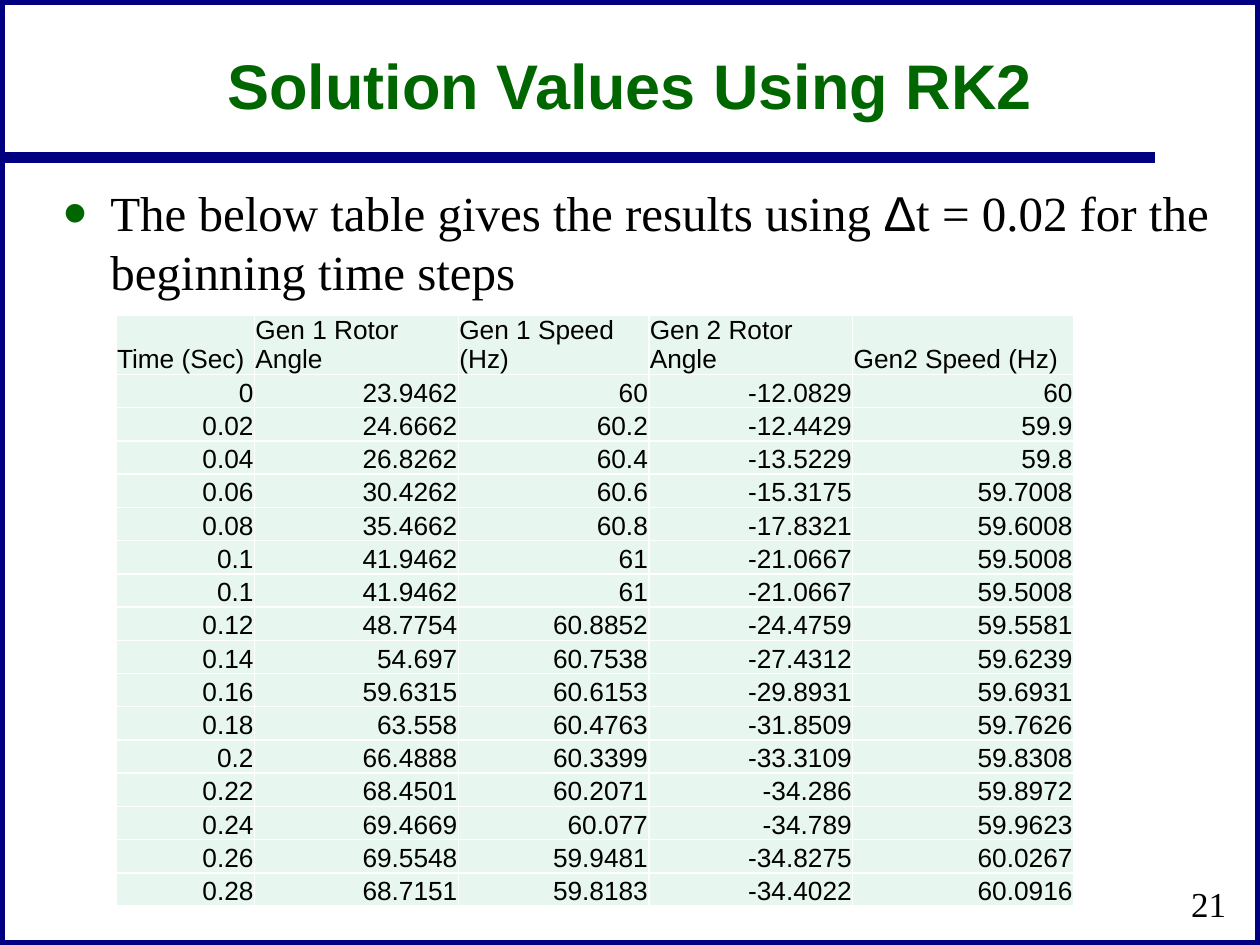
from dataclasses import dataclass

from lxml.etree import SubElement as Sub
from pptx import Presentation
from pptx.dml.color import RGBColor as Rgb
from pptx.enum.shapes import MSO_CONNECTOR as Link, MSO_SHAPE as Form
from pptx.enum.text import MSO_ANCHOR as Anchor, MSO_AUTO_SIZE as Fit, PP_ALIGN as Align
from pptx.oxml.ns import qn
from pptx.util import Cm, Pt


@dataclass(frozen=True)
class Theme:
    navy: str = "000080"
    green: str = "006600"
    black: str = "000000"
    white: str = "FFFFFF"
    mint: str = "E7F6EF"
    sans: str = "Arial"
    serif: str = "Times New Roman"
    title: int = 36
    body: int = 28
    page: int = 20
    cell: int = 15
    rule: int = 6
    grid: int = 1


class Deck:
    def __init__(self, theme):
        self.theme = theme
        self.show = Presentation()
        self.show.slide_width, self.show.slide_height = Cm(25.4), Cm(19.05)
        self.slide = self.show.slides.add_slide(self.show.slide_layouts[1])
        fill = self.slide.background.fill
        fill.solid()
        fill.fore_color.rgb = Rgb.from_string(theme.white)

    def style(self, font, name, size, color, bold=False):
        font.name, font.size, font.bold = name, Pt(size), bold
        font.color.rgb = Rgb.from_string(color)

    def stroke(self, line):
        line.color.rgb = Rgb.from_string(self.theme.navy)
        line.width = Pt(self.theme.rule)

    def place(self, shape, box):
        shape.left, shape.top, shape.width, shape.height = map(Cm, box)
        shape.text_frame.word_wrap = True
        shape.text_frame.auto_size = Fit.NONE
        return shape.text_frame

    def frame(self):
        size = self.show.slide_width, self.show.slide_height
        edge = self.slide.shapes.add_shape(Form.RECTANGLE, 0, 0, *size)
        edge.shadow.inherit = False
        edge.fill.background()
        self.stroke(edge.line)

    def rule(self, left, right, top):
        ends = map(Cm, (left, top, right, top))
        line = self.slide.shapes.add_connector(Link.STRAIGHT, *ends)
        Sub(line.element.spPr, qn("a:effectLst"))
        self.stroke(line.line)

    def title(self, text, box):
        look = self.theme
        area = self.place(self.slide.shapes.title, box)
        area.text = text
        area.vertical_anchor = Anchor.MIDDLE
        para = area.paragraphs[0]
        para.alignment = Align.CENTER
        self.style(para.runs[0].font, look.sans, look.title, look.green, True)

    def bullet(self, parts, box, indent):
        look = self.theme
        area = self.place(self.slide.placeholders[1], box)
        para = area.paragraphs[0]
        props = para._p.get_or_add_pPr()
        props.set("marL", str(Cm(indent)))
        props.set("indent", str(-Cm(indent)))
        Sub(Sub(props, qn("a:buClr")), qn("a:srgbClr"), val=look.green)
        Sub(props, qn("a:buSzPct"), val="140000")
        Sub(props, qn("a:buChar"), char="•")
        para.space_before = Pt(0)
        for text, name in parts:
            run = para.add_run()
            run.text = text
            self.style(run.font, name, look.body, look.black)

    def page(self, text, box):
        look = self.theme
        area = self.place(self.slide.shapes.add_textbox(*map(Cm, box)), box)
        area.text = text
        area.vertical_anchor = Anchor.MIDDLE
        para = area.paragraphs[0]
        para.alignment = Align.RIGHT
        self.style(para.runs[0].font, look.serif, look.page, look.black)

    def cell(self, cell, text, align):
        look = self.theme
        cell.text = text
        cell.vertical_anchor = Anchor.BOTTOM
        cell.margin_left = cell.margin_right = cell.margin_top = Cm(0.02)
        cell.margin_bottom = 0
        props = cell._tc.get_or_add_tcPr()
        for side in ("lnL", "lnR", "lnT", "lnB"):
            line = Sub(props, qn(f"a:{side}"), w=str(Pt(look.grid)))
            Sub(Sub(line, qn("a:solidFill")), qn("a:srgbClr"), val=look.white)
        cell.fill.solid()
        cell.fill.fore_color.rgb = Rgb.from_string(look.mint)
        para = cell.text_frame.paragraphs[0]
        para.alignment = align
        self.style(para.runs[0].font, look.sans, look.cell, look.black)

    def table(self, rows, left, top, widths, head, step):
        high = head + step * (len(rows) - 1)
        box = map(Cm, (left, top, sum(widths), high))
        grid = self.slide.shapes.add_table(len(rows), len(widths), *box).table
        grid.first_row = grid.horz_banding = False
        for col, width in zip(grid.columns, widths):
            col.width = Cm(width)
        for i, row in enumerate(rows):
            grid.rows[i].height = Cm(step if i else head)
            for j, text in enumerate(row):
                self.cell(grid.cell(i, j), text, Align.RIGHT if i else Align.LEFT)

    def save(self):
        self.show.save("out.pptx")


HEAD = ["Time (Sec)", "Gen 1 Rotor Angle", "Gen 1 Speed (Hz)",
        "Gen 2 Rotor Angle", "Gen2 Speed (Hz)"]
DATA = """
0 23.9462 60 -12.0829 60
0.02 24.6662 60.2 -12.4429 59.9
0.04 26.8262 60.4 -13.5229 59.8
0.06 30.4262 60.6 -15.3175 59.7008
0.08 35.4662 60.8 -17.8321 59.6008
0.1 41.9462 61 -21.0667 59.5008
0.1 41.9462 61 -21.0667 59.5008
0.12 48.7754 60.8852 -24.4759 59.5581
0.14 54.697 60.7538 -27.4312 59.6239
0.16 59.6315 60.6153 -29.8931 59.6931
0.18 63.558 60.4763 -31.8509 59.7626
0.2 66.4888 60.3399 -33.3109 59.8308
0.22 68.4501 60.2071 -34.286 59.8972
0.24 69.4669 60.077 -34.789 59.9623
0.26 69.5548 59.9481 -34.8275 60.0267
0.28 68.7151 59.8183 -34.4022 60.0916
"""


def main():
    look = Theme()
    deck = Deck(look)
    deck.frame()
    deck.rule(0, 23.28, 3.18)
    deck.title("Solution Values Using RK2", (1.9, 0.64, 21.6, 2.12))
    parts = [("The below table gives the results using ", look.serif),
             ("Δ", look.sans),
             ("t = 0.02 for the beginning time steps", look.serif)]
    deck.bullet(parts, (1.02, 3.56, 23.72, 3.22), 0.95)
    deck.page("21", (19.69, 17.58, 5.28, 1.27))
    rows = [HEAD] + [line.split() for line in DATA.strip().splitlines()]
    deck.table(rows, 2.34, 6.35, (2.79, 4.11, 3.84, 4.11, 4.45), 1.18, 0.67)
    deck.save()


if __name__ == "__main__":
    main()
